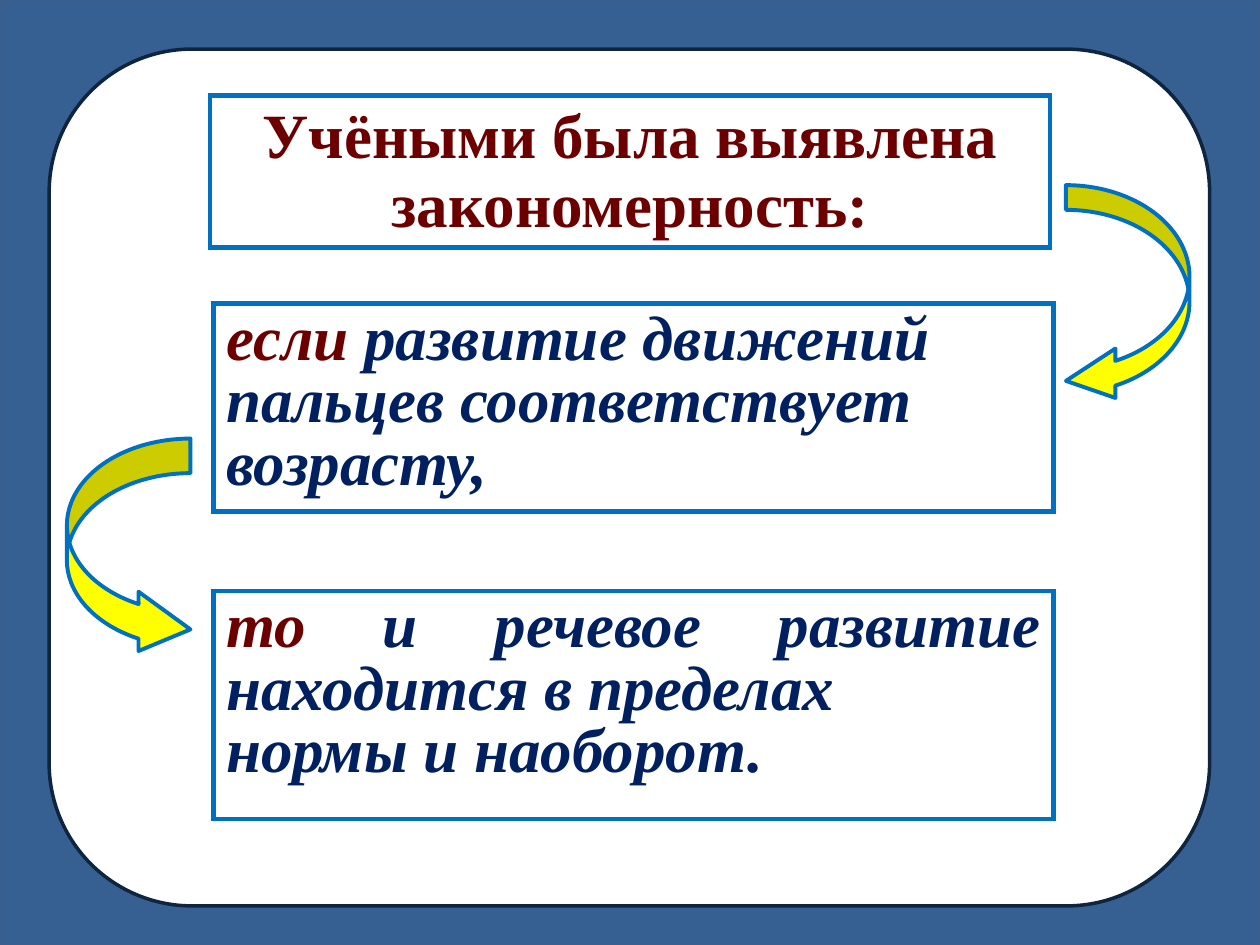
from lxml import etree
from pptx import Presentation
from pptx import util as u
from pptx.dml import color
from pptx.enum import shapes, text
from pptx.oxml import ns

COLORS = {"blue": "376092", "edge": "3A5F8C", "white": "FFFFFF", "dark": "0F243E",
          "border": "0070C0", "maroon": "6C0000", "navy": "002060", "yellow": "FFFF00"}
FONT = {"name": "Times New Roman", "size": u.Pt(36), "bold": True}
KIND = shapes.MSO_SHAPE
ALIGN = text.PP_ALIGN


def rgb(name):
    return color.RGBColor.from_string(COLORS[name])


def add_figure(s, kind, box, fill, line, width, adjustments=()):
    sp = s.shapes.add_shape(kind, *map(u.Pt, box))
    sp.shadow.inherit = False
    sp.fill.solid()
    sp.fill.fore_color.rgb = rgb(fill)
    sp.line.color.rgb = rgb(line)
    sp.line.width = u.Pt(width)
    for i, value in enumerate(adjustments):
        sp.adjustments[i] = value


def add_borders(cell, name, width):
    tc_pr = cell._tc.get_or_add_tcPr()
    for side in ("lnL", "lnR", "lnT", "lnB"):
        ln = etree.SubElement(tc_pr, ns.qn(f"a:{side}"), w=str(u.Pt(width)))
        fill = etree.SubElement(ln, ns.qn("a:solidFill"))
        etree.SubElement(fill, ns.qn("a:srgbClr"), val=COLORS[name])


def add_frame(s, box, paragraphs, italic=True, **layout):
    table = s.shapes.add_table(1, 1, *map(u.Pt, box)).table
    table.first_row = table.horz_banding = False
    cell = table.cell(0, 0)
    add_borders(cell, "border", 3)
    cell.fill.background()
    tf = cell.text_frame
    for i, runs in enumerate(paragraphs):
        p = tf.add_paragraph() if i else tf.paragraphs[0]
        for key, value in layout.items():
            setattr(p, key, value)
        for words, name in runs:
            r = p.add_run()
            r.text = words
            for key, value in {**FONT, "italic": italic}.items():
                setattr(r.font, key, value)
            r.font.color.rgb = rgb(name)


def main():
    prs = Presentation()
    prs.slide_width, prs.slide_height = u.Pt(720), u.Pt(540)
    s = prs.slides.add_slide(prs.slide_layouts[6])

    add_figure(s, KIND.RECTANGLE, (0, 0, 720, 540), "blue", "edge", 2)
    add_figure(s, KIND.ROUNDED_RECTANGLE, (28.1, 28.1, 663.1, 489.6), "white", "dark", 2)

    add_frame(s, (120, 54.7, 480, 73.4),
              [[("Учёными была выявлена закономерность:", "maroon")]],
              italic=False, alignment=ALIGN.CENTER)
    add_frame(s, (122, 173.5, 480, 118.8),
              [[("если", "maroon"), (" развитие движений", "navy")],
               [("пальцев соответствует возрасту,", "navy")]],
              line_spacing=0.9)
    add_frame(s, (122, 337.7, 480, 130.3),
              [[("то", "maroon"), (" и речевое развитие находится в пределах", "navy")],
               [("нормы и наоборот.", "navy")]],
              line_spacing=0.9, alignment=ALIGN.JUSTIFY)

    add_figure(s, KIND.CURVED_LEFT_ARROW, (609.1, 105.8, 70.6, 126),
               "yellow", "border", 2.25, (0.2, 0.4, 0.4))
    add_figure(s, KIND.CURVED_RIGHT_ARROW, (38.2, 250.6, 70.6, 126),
               "yellow", "border", 2.25, (0.28, 0.48, 0.42))
    prs.save("out.pptx")


if __name__ == "__main__":
    main()
